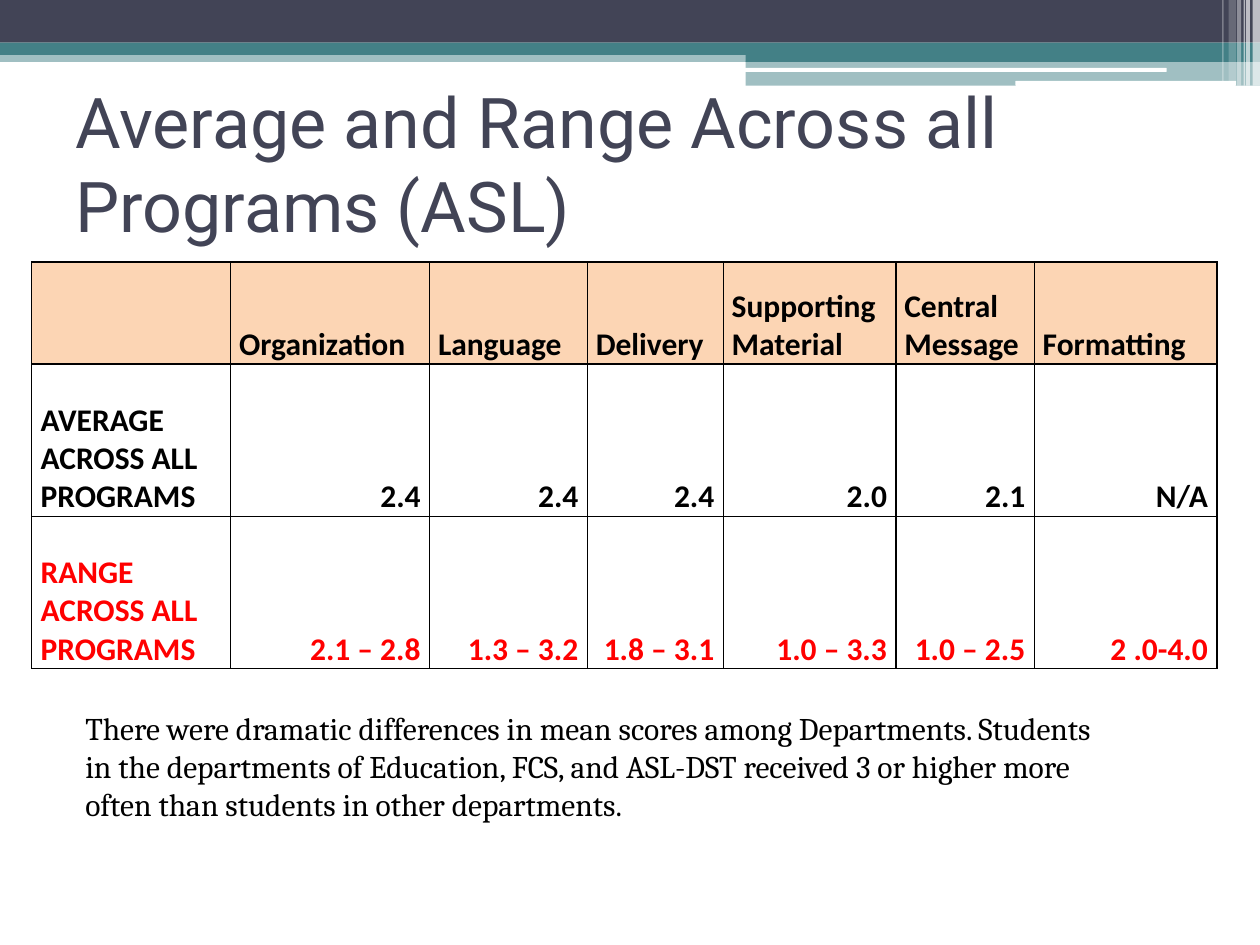
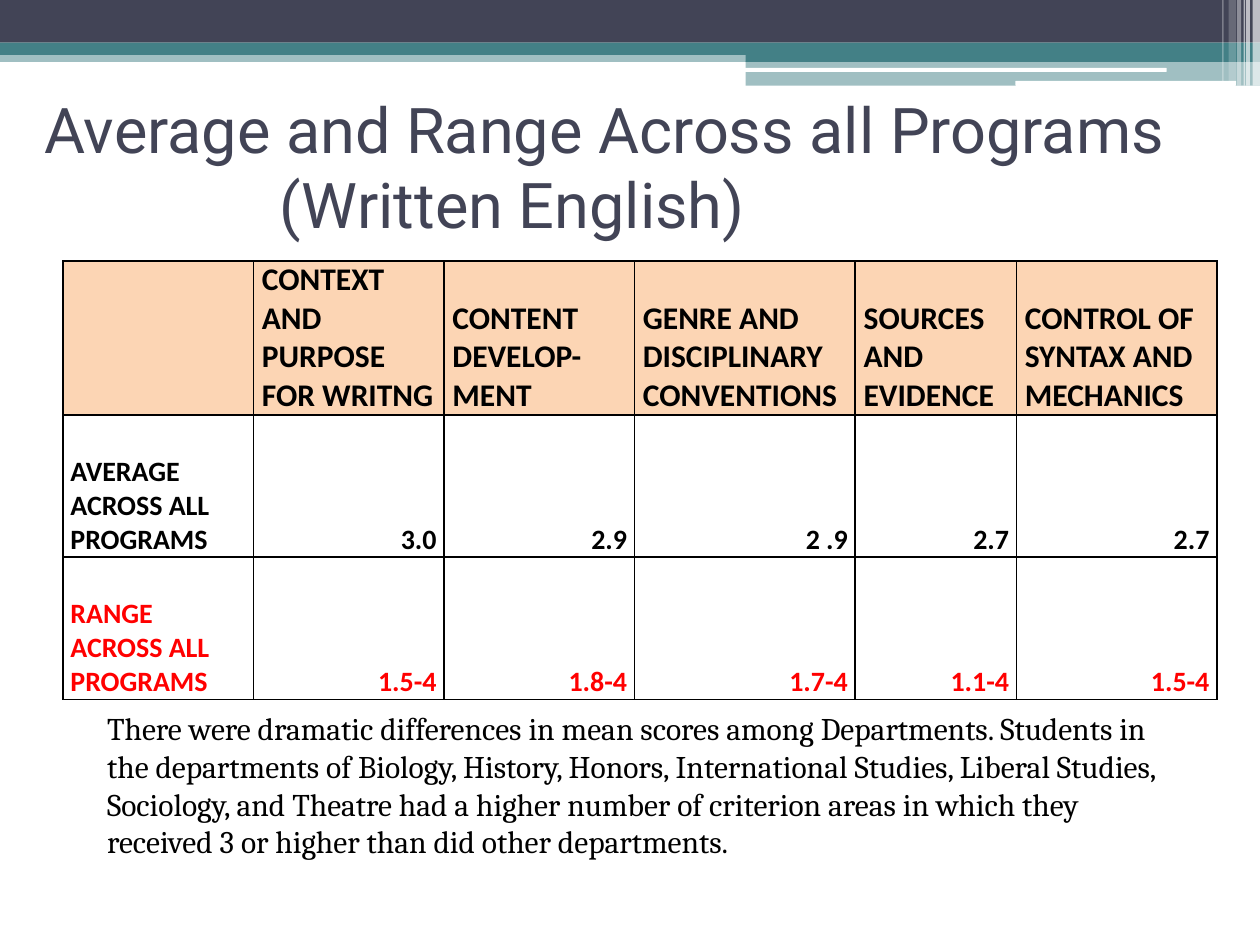
from lxml import etree
from pptx import Presentation
from pptx.dml.color import RGBColor
from pptx.enum.shapes import MSO_SHAPE
from pptx.enum.text import MSO_ANCHOR, MSO_AUTO_SIZE, PP_ALIGN
from pptx.oxml.ns import qn
from pptx.util import Cm, Pt

RECT, ROUND = MSO_SHAPE.RECTANGLE, MSO_SHAPE.ROUNDED_RECTANGLE
LEFT, RIGHT = PP_ALIGN.LEFT, PP_ALIGN.RIGHT
MIDDLE, BOTTOM = MSO_ANCHOR.MIDDLE, MSO_ANCHOR.BOTTOM
NO_AUTOFIT = MSO_AUTO_SIZE.NONE
TITLE_ONLY = 5

SLATE, TEAL, WHITE, BLACK = "424456", "438086", "FFFFFF", "000000"
PEACH, RED = "FCD5B4", "FF0000"
HEADING_FONT, TABLE_FONT, BODY_FONT = "Roboto", "Calibri", "Cambria"

# Header decoration: preset, left, top, width, height (cm), colour, opacity %
BANDS = [
    (RECT, 0, 1.02, 25.4, 0.23, TEAL, 50),
    (RECT, 0, 0, 25.4, 0.86, SLATE, 100),
    (RECT, 0, 0.86, 25.4, 0.25, TEAL, 100),
    (RECT, 15.03, 1, 10.37, 0.25, TEAL, 100),
    (RECT, 15.03, 1.23, 10.37, 0.5, TEAL, 50),
    (ROUND, 15.01, 1.37, 8.51, 0.08, WHITE, 100),
    (ROUND, 20.47, 1.63, 4.45, 0.1, WHITE, 100),
]
# Pale stripes at the right edge: left, width, height (cm), opacity %
STRIPES = [
    (25.25, 0.15, 1.73, 65), (25.12, 0.08, 1.73, 65), (25.07, 0.03, 1.73, 60),
    (24.94, 0.08, 1.73, 40), (24.77, 0.15, 1.63, 20), (24.64, 0.03, 1.63, 30),
]
BANDS += [(RECT, x, 0, w, h, WHITE, a) for x, w, h, a in STRIPES]

ASL = {
    "title": ["Average and Range Across all Programs (ASL)"],
    "title_box": (1.27, 1.27, 22.86, 4.01), "title_size": 40, "indent": 0,
    "table_at": (0.64, 5.28), "body_size": 18, "body_margin": 0.18,
    "cols": [4.01, 4.01, 3.18, 2.74, 3.48, 2.79, 3.68],
    "rows": [2.06, 3.07, 3.07, 1.02],
    "cells": [
        ["", "Organization", "Language", "Delivery", "Supporting Material",
         "Central Message", "Formatting"],
        ["AVERAGE ACROSS ALL PROGRAMS", "2.4", "2.4", "2.4", "2.0", "2.1", "N/A"],
        ["RANGE ACROSS ALL PROGRAMS", "2.1 – 2.8", "1.3 – 3.2", "1.8 – 3.1",
         "1.0 – 3.3", "1.0 – 2.5", "2 .0-4.0"],
    ],
    "note_box": (1.47, 14.17, 21.39, 4.11),
    "note": "There were dramatic differences in mean scores among Departments. "
            "Students in the departments of Education, FCS, and ASL-DST received "
            "3 or higher more often than students in other departments.",
}
WRITTEN = {
    "title": ["Average and Range Across all Programs", "(Written English)"],
    "title_box": (0.64, 1.4, 23.5, 3.89), "title_size": 36, "indent": 4.75,
    "table_at": (1.27, 5.26), "body_size": 16, "body_margin": 0.15,
    "cols": [3.84, 3.84, 3.84, 4.45, 3.25, 4.04],
    "rows": [2.87, 2.87, 2.87, 0.97],
    "cells": [
        ["", "CONTEXT AND PURPOSE FOR WRITNG", "CONTENT DEVELOP-MENT",
         "GENRE AND DISCIPLINARY CONVENTIONS", "SOURCES AND EVIDENCE",
         "CONTROL OF SYNTAX AND MECHANICS"],
        ["AVERAGE ACROSS ALL PROGRAMS", "3.0", "2.9", "2 .9", "2.7", "2.7"],
        ["RANGE ACROSS ALL PROGRAMS", "1.5-4", "1.8-4", "1.7-4", "1.1-4", "1.5-4"],
    ],
    "note_box": (1.91, 14.17, 21.79, 4.88),
    "note": "There were dramatic differences in mean scores among Departments. "
            "Students in the departments of Biology, History, Honors, "
            "International Studies, Liberal Studies, Sociology, and Theatre had "
            "a higher number of criterion areas in which they received 3 or "
            "higher than did other departments.",
}


def rgb(color):
    return RGBColor.from_string(color)


def set_attrs(obj, values):
    for name, value in values.items():
        setattr(obj, name, value)


def write(p, text, font, size, color, bold=False, align=LEFT):
    p.alignment = align
    r = p.add_run()
    r.text = text
    set_attrs(r.font, {"name": font, "size": Pt(size), "bold": bold})
    r.font.color.rgb = rgb(color)


def add_bands(s):
    for preset, x, y, w, h, color, opacity in BANDS:
        sp = s.shapes.add_shape(preset, Cm(x), Cm(y), Cm(w), Cm(h))
        sp.shadow.inherit = False
        sp.line.fill.background()
        sp.fill.solid()
        sp.fill.fore_color.rgb = rgb(color)
        if opacity < 100:
            clr = sp.element.spPr.find(qn("a:solidFill"))[0]
            etree.SubElement(clr, qn("a:alpha"), val=str(opacity * 1000))


def add_title(s, lines, box, size, indent):
    sp = s.shapes.title
    set_attrs(sp, dict(zip(("left", "top", "width", "height"), map(Cm, box))))
    tf = sp.text_frame
    set_attrs(tf, {"vertical_anchor": MIDDLE, "word_wrap": True,
                   "auto_size": NO_AUTOFIT})
    for i, line in enumerate(lines):
        p = tf.add_paragraph() if i else tf.paragraphs[0]
        p.space_before = Pt(0)
        write(p, line, HEADING_FONT, size, SLATE)
        if i:
            p._p.get_or_add_pPr().set("marL", str(Cm(indent)))


def set_borders(cell, visible):
    tcPr = cell._tc.get_or_add_tcPr()
    for side in ("lnL", "lnR", "lnT", "lnB"):
        ln = etree.SubElement(tcPr, qn("a:" + side), w=str(Pt(1)))
        if side in visible:
            fill = etree.SubElement(ln, qn("a:solidFill"))
            etree.SubElement(fill, qn("a:srgbClr"), val=BLACK)
        else:
            etree.SubElement(ln, qn("a:noFill"))


def format_cell(cell, margin, fill=None, borders=("lnL", "lnR", "lnT", "lnB")):
    set_attrs(cell, {"margin_left": Cm(margin), "margin_right": Cm(margin),
                     "margin_top": 0, "margin_bottom": 0,
                     "vertical_anchor": BOTTOM})
    set_borders(cell, borders)
    if fill:
        cell.fill.solid()
        cell.fill.fore_color.rgb = rgb(fill)
    else:
        cell.fill.background()


def add_scores(s, at, cols, rows, cells, body_size, body_margin):
    x, y = at
    table = s.shapes.add_table(len(rows), len(cols), Cm(x), Cm(y),
                               Cm(sum(cols)), Cm(sum(rows))).table
    set_attrs(table, {"first_row": False, "horz_banding": False})
    for column, width in zip(table.columns, cols):
        column.width = Cm(width)
    for row, height in zip(table.rows, rows):
        row.height = Cm(height)

    # Header, average and range rows
    for i, texts in enumerate(cells):
        size, margin = (body_size, body_margin) if i else (18, 0.17)
        color = RED if i == 2 else BLACK
        for j, text in enumerate(texts):
            cell = table.cell(i, j)
            format_cell(cell, margin, None if i else PEACH)
            if text:
                write(cell.text_frame.paragraphs[0], text, TABLE_FONT, size,
                      color, True, RIGHT if i and j else LEFT)

    # Open closing row across the whole width
    last = len(rows) - 1
    for j in range(len(cols)):
        format_cell(table.cell(last, j), 0.17, borders=("lnT",))
    table.cell(last, 0).merge(table.cell(last, len(cols) - 1))


def add_note(s, box, text):
    tf = s.shapes.add_textbox(*map(Cm, box)).text_frame
    tf.word_wrap = True
    write(tf.paragraphs[0], text, BODY_FONT, 18, BLACK)


def add_score_slide(prs, d):
    s = prs.slides.add_slide(prs.slide_layouts[TITLE_ONLY])
    add_bands(s)
    add_title(s, d["title"], d["title_box"], d["title_size"], d["indent"])
    add_scores(s, d["table_at"], d["cols"], d["rows"], d["cells"],
               d["body_size"], d["body_margin"])
    add_note(s, d["note_box"], d["note"])


def main():
    prs = Presentation()
    set_attrs(prs, {"slide_width": Cm(25.4), "slide_height": Cm(19.05)})
    for content in (ASL, WRITTEN):
        add_score_slide(prs, content)
    prs.save("out.pptx")


if __name__ == "__main__":
    main()
